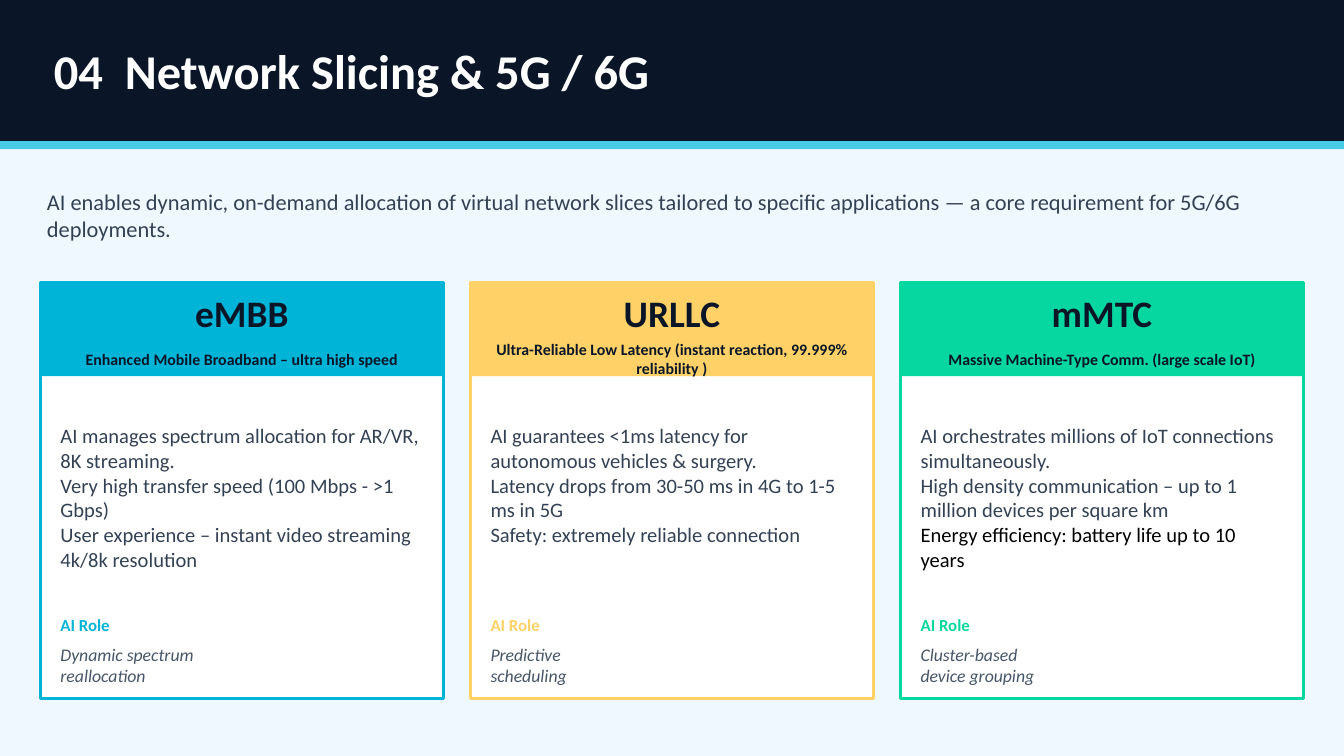
from dataclasses import dataclass

from pptx import Presentation
from pptx.dml.color import RGBColor
from pptx.enum.shapes import MSO_SHAPE
from pptx.enum.text import MSO_ANCHOR, MSO_AUTO_SIZE, PP_ALIGN
from pptx.util import Inches, Pt


@dataclass(frozen=True)
class Theme:
    font: str = "Calibri"
    page: str = "F0F8FF"
    navy: str = "0A1628"
    aqua: str = "48CAE4"
    white: str = "FFFFFF"
    black: str = "000000"
    slate: str = "334155"
    grey: str = "475569"
    cyan: str = "00B4D8"
    gold: str = "FFD166"
    green: str = "06D6A0"
    title: float = 26
    head: float = 20
    intro: float = 12
    body: float = 11
    role: float = 9.5
    label: float = 9
    sub: float = 8.5


theme = Theme()
rgb = RGBColor.from_string


def add_text(lines, left, top, width, height, *, size, color, bold=False,
             italic=False, align=PP_ALIGN.LEFT, anchor=MSO_ANCHOR.MIDDLE,
             inset=0, shape=None):
    """Fill a new text box, or the given shape, with one paragraph per line."""
    place = [Inches(n) for n in (left, top, width, height)]
    if shape is None:
        shape = slide.shapes.add_textbox(*place)
    shape.left, shape.top, shape.width, shape.height = place
    frame = shape.text_frame
    frame.word_wrap = True
    frame.auto_size = MSO_AUTO_SIZE.NONE
    frame.vertical_anchor = anchor
    frame.margin_left = frame.margin_right = frame.margin_bottom = 0
    frame.margin_top = Inches(inset)
    frame.text = "\n".join(lines)
    for para in frame.paragraphs:
        para.alignment = align
        for run in para.runs:
            font = run.font
            font.name, font.size = theme.font, Pt(size)
            font.bold, font.italic = bold, italic
            font.color.rgb = rgb(color)
    return frame


def add_rect(left, top, width, height, fill, line=None):
    rect = slide.shapes.add_shape(
        MSO_SHAPE.RECTANGLE, *[Inches(n) for n in (left, top, width, height)])
    rect.shadow.inherit = False
    rect.fill.solid()
    rect.fill.fore_color.rgb = rgb(fill)
    if line:
        rect.line.color.rgb = rgb(line)
        rect.line.width = Pt(1.5)
    else:
        rect.line.fill.background()


# A 16:9 slide, ten inches wide
deck = Presentation()
deck.slide_width = Inches(10)
deck.slide_height = Inches(10 * 9 / 16)
slide = deck.slides.add_slide(deck.slide_layouts[5])
slide.background.fill.solid()
slide.background.fill.fore_color.rgb = rgb(theme.page)

# Header band, with the title raised in front of it
add_rect(0, 0, 10, 1.05, theme.navy)
add_rect(0, 1.05, 10, 0.06, theme.aqua)
title = slide.shapes.title
title.element.getparent().append(title.element)
add_text(["04  Network Slicing & 5G / 6G"], 0.4, 0, 9, 1.05, shape=title,
         size=theme.title, color=theme.white, bold=True)

add_text(["AI enables dynamic, on-demand allocation of virtual network slices "
          "tailored to specific applications — a core requirement for 5G/6G "
          "deployments."],
         0.35, 1.3, 9.3, 0.6, size=theme.intro, color=theme.slate)

# Slice cards: name, meaning, colour, points, AI role
cards = [
    ("eMBB", "Enhanced Mobile Broadband – ultra high speed", theme.cyan,
     ["AI manages spectrum allocation for AR/VR, 8K streaming.",
      "Very high transfer speed (100 Mbps - >1 Gbps)",
      "User experience – instant video streaming 4k/8k resolution"],
     ["Dynamic spectrum", "reallocation"]),
    ("URLLC",
     "Ultra-Reliable Low Latency (instant reaction, 99.999% reliability )",
     theme.gold,
     ["AI guarantees <1ms latency for autonomous vehicles & surgery.",
      "Latency drops from 30-50 ms in 4G to 1-5 ms in 5G",
      "Safety: extremely reliable connection"],
     ["Predictive", "scheduling"]),
    ("mMTC", "Massive Machine-Type Comm. (large scale IoT)", theme.green,
     ["AI orchestrates millions of IoT connections simultaneously.",
      "High density communication – up to 1 million devices per square km",
      "Energy efficiency: battery life up to 10 years"],
     ["Cluster-based", "device grouping"]),
]
wide, gap, pad = 3, 0.2, 0.15
for index, (name, sense, hue, points, role) in enumerate(cards):
    left = 0.3 + index * (wide + gap)
    inner, span = left + pad, wide - 2 * pad
    add_rect(left, 2.1, wide, 3.1, theme.white, hue)
    add_rect(left, 2.1, wide, 0.7, hue)
    add_text([name], left, 2.1, wide, 0.45, size=theme.head,
             color=theme.navy, bold=True, align=PP_ALIGN.CENTER)
    add_text([sense], left, 2.52, wide, 0.3, size=theme.sub,
             color=theme.navy, bold=True, align=PP_ALIGN.CENTER)
    body = add_text(points, inner, 2.95, span, 1.5, size=theme.body,
                    color=theme.slate, anchor=MSO_ANCHOR.TOP, inset=0.2)
    add_text(["AI Role"], inner, 4.5, 1, 0.3, size=theme.label,
             color=hue, bold=True)
    add_text(role, inner, 4.75, span, 0.4, size=theme.role,
             color=theme.grey, italic=True)

# The closing point of the last card stands out in black
body.paragraphs[-1].runs[0].font.color.rgb = rgb(theme.black)

deck.save("out.pptx")
